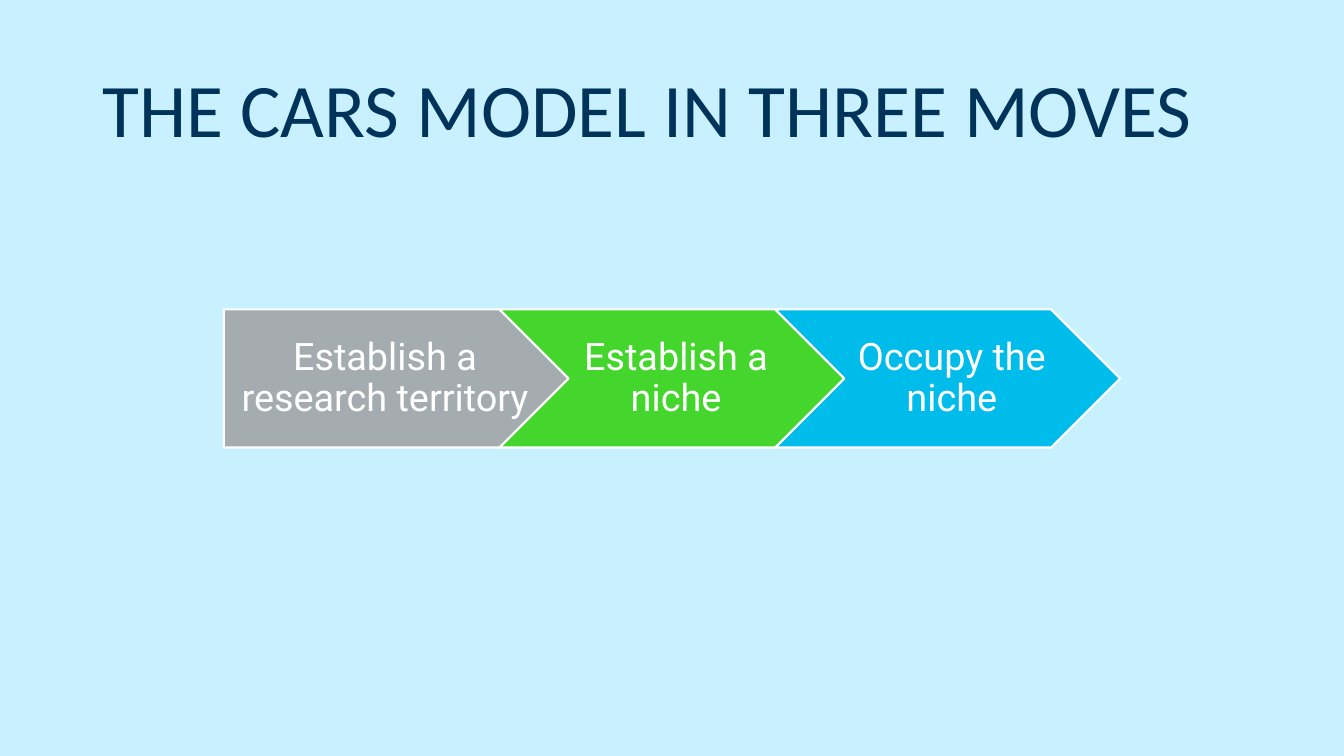
from dataclasses import dataclass

from pptx import Presentation
from pptx.dml.color import RGBColor
from pptx.enum.shapes import MSO_SHAPE
from pptx.enum.text import MSO_ANCHOR, PP_ALIGN
from pptx.slide import Slide
from pptx.text.text import TextFrame
from pptx.util import Inches, Pt

COLORS = {
    "background": "C9F0FF",
    "navy": "003359",
    "gray": "A5ACAF",
    "green": "44D62C",
    "blue": "00BCEB",
    "white": "FFFFFF",
}

ARROW_LEFT, ARROW_TOP = 2.22, 3.07
ARROW_WIDTH, ARROW_HEIGHT = 3.42, 1.37
# Each arrow starts where the previous point begins, half a height early
ARROW_STEP = ARROW_WIDTH - ARROW_HEIGHT / 2


@dataclass(frozen=True)
class Move:
    label: str
    color: str
    geometry: MSO_SHAPE
    left_inset: float


MOVES = [
    Move("Establish a research territory", "gray", MSO_SHAPE.PENTAGON, 0.16),
    Move("Establish a niche", "green", MSO_SHAPE.CHEVRON, 0.12),
    Move("Occupy the niche", "blue", MSO_SHAPE.CHEVRON, 0.12),
]


def color(name: str) -> RGBColor:
    return RGBColor.from_string(COLORS[name])


def write_text(text_frame: TextFrame, text: str, font_name: str, size: int,
               color_name: str, alignment: PP_ALIGN) -> None:
    text_frame.text = text
    text_frame.word_wrap = True
    text_frame.vertical_anchor = MSO_ANCHOR.MIDDLE
    paragraph = text_frame.paragraphs[0]
    paragraph.alignment = alignment
    paragraph.line_spacing = 0.9
    font = paragraph.runs[0].font
    font.name = font_name
    font.size = Pt(size)
    font.color.rgb = color(color_name)


def add_title(slide: Slide, text: str) -> None:
    title = slide.shapes.add_textbox(Inches(0.92), Inches(0.4), Inches(11.5), Inches(1.45))
    write_text(title.text_frame, text, "Calibri", 54, "navy", PP_ALIGN.LEFT)


def add_move(slide: Slide, move: Move, index: int) -> None:
    shape = slide.shapes.add_shape(
        move.geometry,
        Inches(ARROW_LEFT + index * ARROW_STEP), Inches(ARROW_TOP),
        Inches(ARROW_WIDTH), Inches(ARROW_HEIGHT),
    )
    shape.shadow.inherit = False
    shape.fill.solid()
    shape.fill.fore_color.rgb = color(move.color)
    shape.line.color.rgb = color("white")
    shape.line.width = Pt(1.5)

    text_frame = shape.text_frame
    write_text(text_frame, move.label, "Roboto", 27, "white", PP_ALIGN.CENTER)
    text_frame.margin_left = Inches(move.left_inset)
    text_frame.margin_right = Inches(0.04)
    text_frame.margin_top = text_frame.margin_bottom = Inches(0.08)


def main() -> None:
    presentation = Presentation()
    presentation.slide_width = Inches(13.33)
    presentation.slide_height = Inches(7.5)
    slide = presentation.slides.add_slide(presentation.slide_layouts[6])

    # Background
    background = slide.background.fill
    background.solid()
    background.fore_color.rgb = color("background")

    # Title and the chain of moves
    add_title(slide, "THE CARS MODEL IN THREE MOVES")
    for index, move in enumerate(MOVES):
        add_move(slide, move, index)

    presentation.save("out.pptx")


if __name__ == "__main__":
    main()
